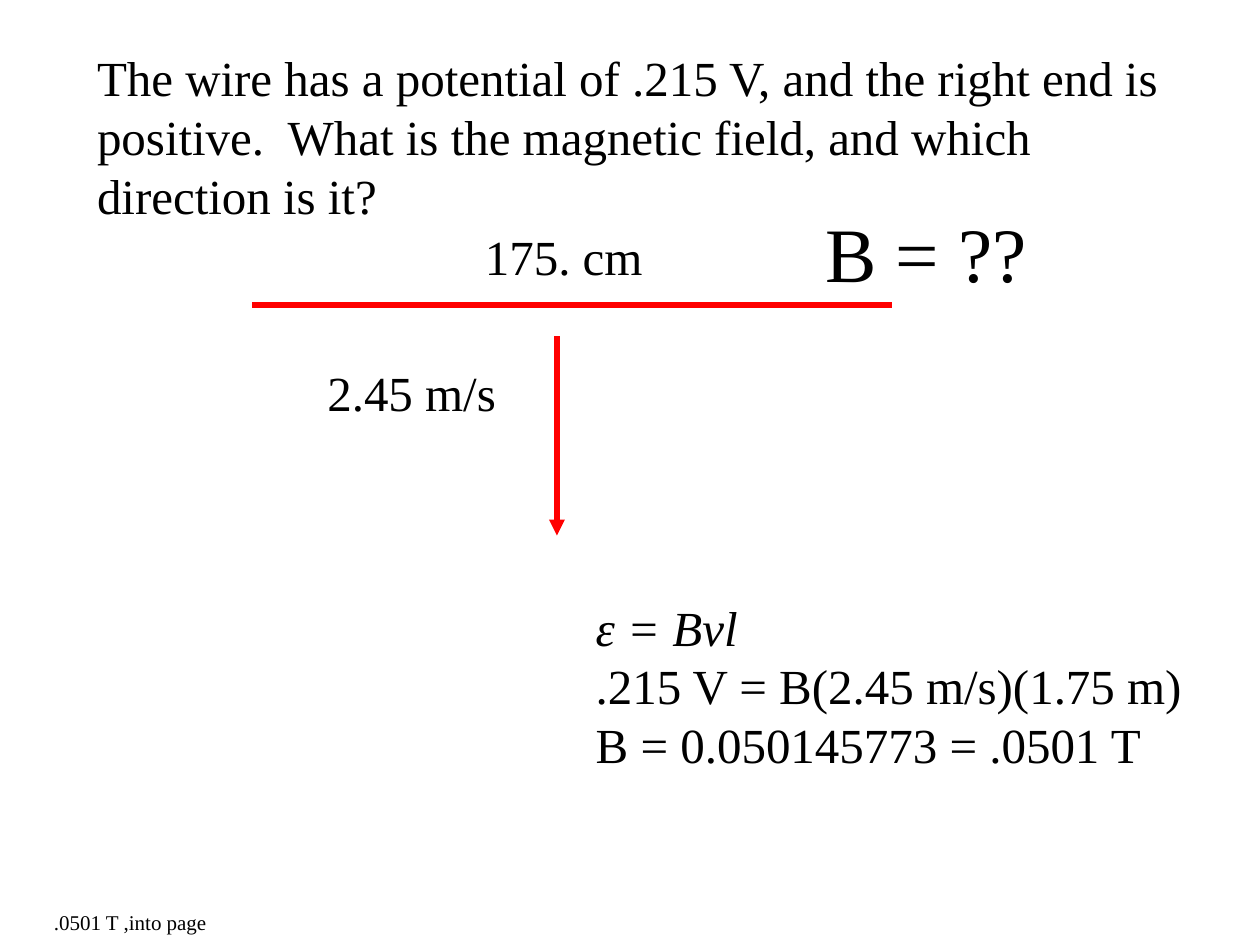
"""Build a physics slide on the potential across a wire moving in a magnetic field."""
from lxml import etree
from pptx import Presentation
from pptx import util as u
from pptx.dml.color import RGBColor
from pptx.enum import shapes, text
from pptx.oxml.ns import qn

THEME = {
    "font": "Times New Roman",
    "ink": RGBColor(0, 0, 0),
    "paper": RGBColor(255, 255, 255),
    "accent": RGBColor(255, 0, 0),
    "small": 12, "body": 28, "large": 44, "stroke": 3,
}

QUESTION = ("The wire has a potential of .215 V, and the right end is positive.  "
            "What is the magnetic field, and which direction is it?")
QUESTION_AREA = (0.67, 0.33, 9.08, 1.5)
LABELS = [
    (".0501 T ,into page", "small", (0.33, 7.17, 1.42, 0.3)),
    ("B = ??", "large", (6.45, 1.58, 1.8, 0.83)),
    ("175. cm", "body", (3.75, 1.75, 1.45, 0.57)),
    ("2.45 m/s", "body", (2.5, 2.83, 1.54, 0.57)),
]
WORKING = [
    ("ε = Bvl", True),
    (".215 V = B(2.45 m/s)(1.75 m)", False),
    ("B = 0.050145773 = .0501 T", False),
]
WORKING_AREA = (4.63, 4.69, 4.87, 1.5)
WIRE = (2, 2.42, 7.08, 2.42)
VELOCITY = (4.42, 2.67, 4.42, 4.25)


def inches(values):
    return [u.Inches(value) for value in values]


def apply(target, values):
    for name, value in values.items():
        setattr(target, name, value)


def write(box, lines, size, wrap=False):
    frame = box.text_frame
    apply(frame, {"word_wrap": wrap, "vertical_anchor": text.MSO_ANCHOR.TOP,
                  "auto_size": text.MSO_AUTO_SIZE.SHAPE_TO_FIT_TEXT})
    for index, (words, italic) in enumerate(lines):
        para = frame.add_paragraph() if index else frame.paragraphs[0]
        apply(para, {"alignment": text.PP_ALIGN.LEFT, "line_spacing": 1.0,
                     "space_before": u.Pt(0)})
        span = para.add_run()
        span.text = words
        apply(span.font, {"name": THEME["font"], "size": u.Pt(THEME[size]),
                          "italic": italic})
        span.font.color.rgb = THEME["ink"]


def add_line(slide, ends, arrow=False):
    line = slide.shapes.add_connector(shapes.MSO_CONNECTOR.STRAIGHT, *inches(ends))
    line.line.color.rgb = THEME["accent"]
    line.line.width = u.Pt(THEME["stroke"])
    if arrow:
        etree.SubElement(line.line._get_or_add_ln(), qn("a:tailEnd"), type="triangle")
    etree.SubElement(line._element.spPr, qn("a:effectLst"))


def main():
    deck = Presentation()
    deck.slide_width, deck.slide_height = inches((10, 7.5))
    slide = deck.slides.add_slide(deck.slide_layouts.get_by_name("Title Only"))

    title = slide.shapes.title
    apply(title, dict(zip(("left", "top", "width", "height"), inches(QUESTION_AREA))))
    write(title, [(QUESTION, False)], "body", wrap=True)

    for words, size, area in LABELS:
        write(slide.shapes.add_textbox(*inches(area)), [(words, False)], size)

    panel = slide.shapes.add_shape(shapes.MSO_SHAPE.RECTANGLE, *inches(WORKING_AREA))
    panel.shadow.inherit = False
    panel.fill.solid()
    panel.fill.fore_color.rgb = THEME["paper"]
    panel.line.fill.background()
    write(panel, WORKING, "body")

    add_line(slide, WIRE)
    add_line(slide, VELOCITY, arrow=True)
    deck.save("out.pptx")


if __name__ == "__main__":
    main()
